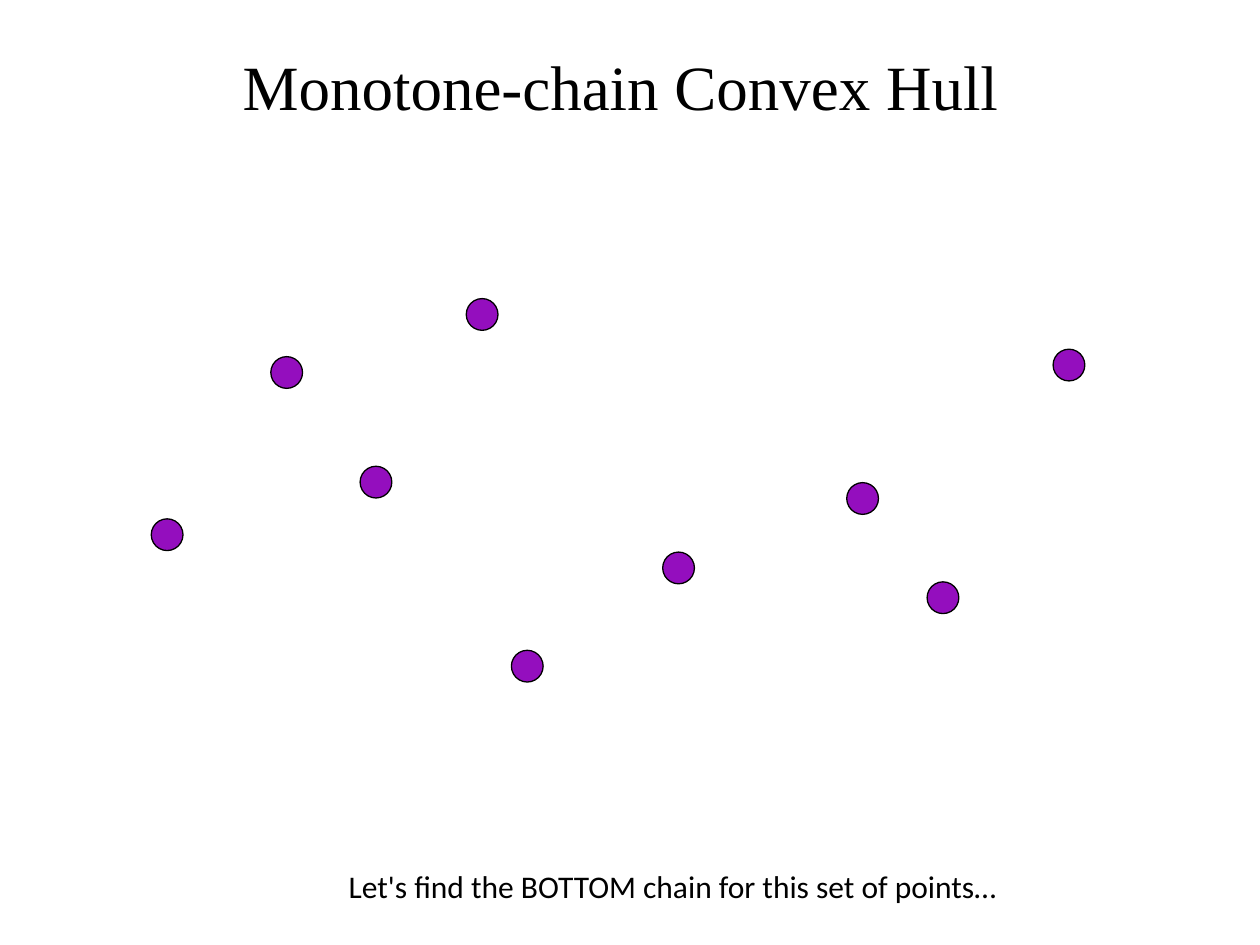
from pptx import Presentation
from pptx.dml.color import RGBColor
from pptx.enum.shapes import MSO_SHAPE
from pptx.enum.text import MSO_AUTO_SIZE, PP_ALIGN
from pptx.util import Cm, Pt

OVAL = MSO_SHAPE.OVAL
GROW = MSO_AUTO_SIZE.SHAPE_TO_FIT_TEXT
LEFT, CENTER = PP_ALIGN.LEFT, PP_ALIGN.CENTER
BLACK = RGBColor(0x00, 0x00, 0x00)
PURPLE = RGBColor(0x94, 0x0E, 0xBE)

TEXTS = [
    ("Monotone-chain Convex Hull", (1.7, 0.84, 21.62, 1.8), CENTER, True,
     {"name": "Times New Roman", "size": Pt(36)}),
    ("Let's find the BOTTOM chain for this set of points…",
     (6.78, 17.35, 13.79, 1.02), LEFT, False,
     {"name": "Calibri", "size": Pt(18)}),
]
POINT_SIZE = 0.64
POINTS = [
    (3.05, 10.46), (5.46, 7.19), (7.26, 9.4),
    (9.4, 6.02), (10.31, 13.11), (13.36, 11.13),
    (17.07, 9.73), (18.69, 11.73), (21.23, 7.04),
]


def add_text(page, text, place, align, wrap, font_format):
    box = page.shapes.add_textbox(*map(Cm, place))
    frame = box.text_frame
    frame.word_wrap = wrap
    frame.auto_size = GROW
    para = frame.paragraphs[0]
    para.alignment = align
    span = para.add_run()
    span.text = text
    for name, value in font_format.items():
        setattr(span.font, name, value)
    span.font.color.rgb = BLACK


def add_point(page, left, top):
    point = page.shapes.add_shape(
        OVAL, Cm(left), Cm(top), Cm(POINT_SIZE), Cm(POINT_SIZE))
    point.shadow.inherit = False
    point.fill.solid()
    point.fill.fore_color.rgb = PURPLE
    point.line.color.rgb = BLACK
    point.line.width = Pt(0.75)


def main():
    deck = Presentation()
    deck.slide_width, deck.slide_height = Cm(25.4), Cm(19.05)
    page = deck.slides.add_slide(deck.slide_layouts[6])
    title, caption = TEXTS
    add_text(page, *title)
    for left, top in POINTS:
        add_point(page, left, top)
    add_text(page, *caption)
    deck.save("out.pptx")


if __name__ == "__main__":
    main()
